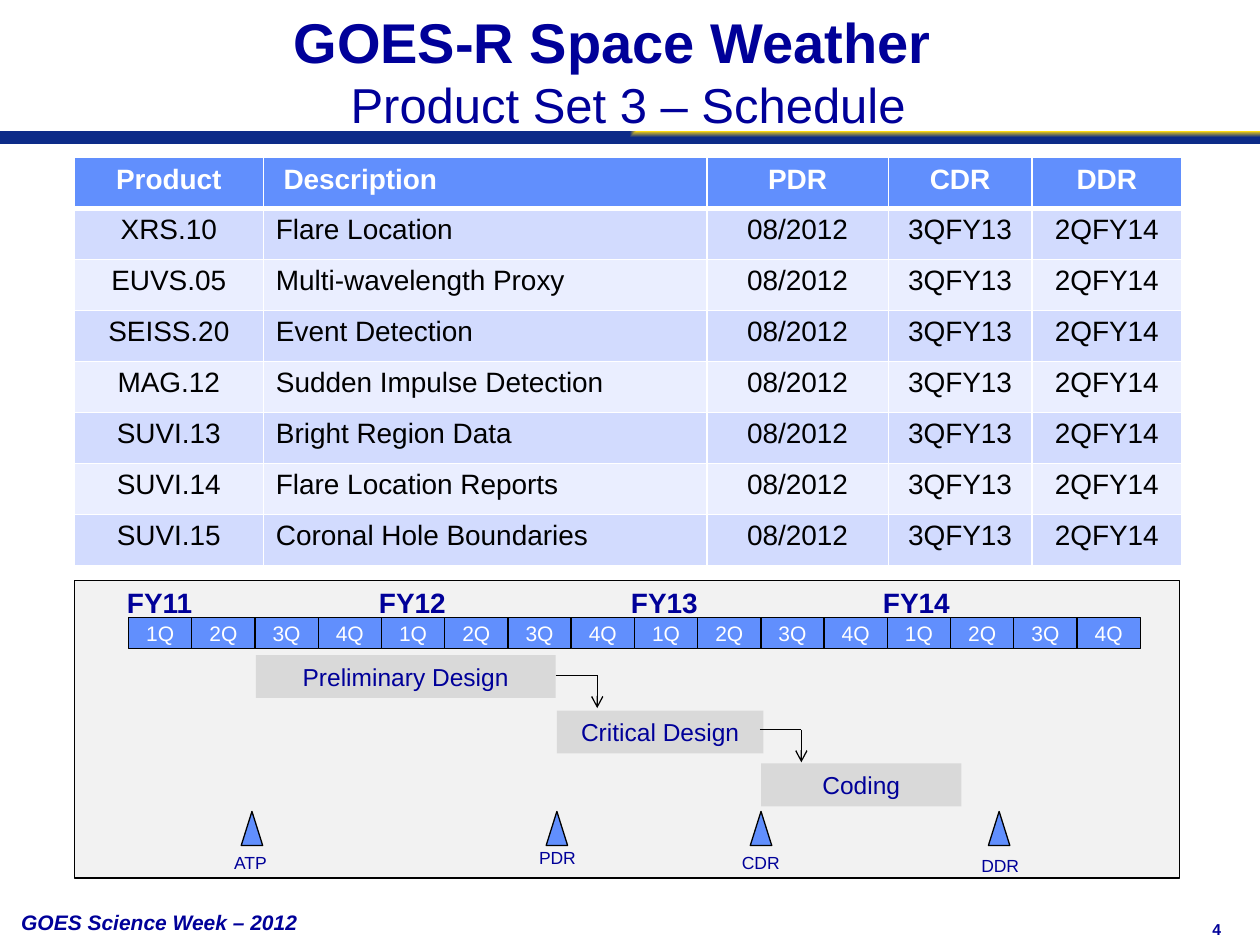
from dataclasses import dataclass
from typing import NamedTuple

from lxml.etree import SubElement
from pptx import Presentation
from pptx.dml.color import RGBColor
from pptx.enum.shapes import MSO_CONNECTOR as Conn, MSO_SHAPE as Shape
from pptx.enum.text import MSO_ANCHOR as Anchor, MSO_AUTO_SIZE as Fit, PP_ALIGN as Align
from pptx.oxml import parse_xml
from pptx.oxml.ns import nsdecls, qn
from pptx.util import Inches, Pt


@dataclass(frozen=True)
class Theme:
    font: str = "Arial"
    navy: str = "000099"
    blue: str = "618FFD"
    white: str = "FFFFFF"
    black: str = "000000"
    panel: str = "F2F2F2"
    bar: str = "D9D9D9"
    bands: tuple = ("D2DBFE", "EAEEFF")
    gold: str = "FED910"
    deep: str = "0D2B88"
    title: int = 32
    sub: int = 28
    cell: int = 16
    phase: int = 14
    small: int = 12
    mark: int = 10
    page: int = 9


class Phase(NamedTuple):
    name: str
    left: float
    top: float
    width: float


class Mark(NamedTuple):
    name: str
    mid: float
    left: float
    top: float


class Step(NamedTuple):
    left: float
    top: float


T = Theme()
HEAD = ("Product", "Description", "PDR", "CDR", "DDR")
ITEMS = (
    ("XRS.10", "Flare Location"),
    ("EUVS.05", "Multi-wavelength Proxy"),
    ("SEISS.20", "Event Detection"),
    ("MAG.12", "Sudden Impulse Detection"),
    ("SUVI.13", "Bright Region Data"),
    ("SUVI.14", "Flare Location Reports"),
    ("SUVI.15", "Coronal Hole Boundaries"),
)
DATES = ("08/2012", "3QFY13", "2QFY14")
WIDTHS = (1.5, 3.52, 1.44, 1.14, 1.19)
YEARS = ("FY11", "FY12", "FY13", "FY14")
PHASES = (
    Phase("Preliminary Design", 2.03, 5.2, 2.38),
    Phase("Critical Design", 4.42, 5.64, 1.64),
    Phase("Coding", 6.04, 6.06, 1.59),
)
MARKS = (
    Mark("ATP", 2, 1.76, 6.71),
    Mark("PDR", 4.42, 4.18, 6.67),
    Mark("CDR", 6.04, 5.79, 6.71),
    Mark("DDR", 7.93, 7.69, 6.74),
)
STEPS = (Step(4.41, 5.36), Step(6.03, 5.79))


def rgb(code: str) -> RGBColor:
    return RGBColor.from_string(code)


def write(para, text: str, size: int, color: str = T.navy, bold: bool = False,
          italic: bool = False, align=Align.LEFT) -> None:
    para.alignment = align
    run = para.add_run()
    run.text = text
    font = run.font
    font.name, font.size, font.bold, font.italic = T.font, Pt(size), bold, italic
    font.color.rgb = rgb(color)


def box(slide, left: float, top: float, width: float, height: float, wrap: bool = False):
    """Add an empty text box and return its first paragraph."""
    frame = slide.shapes.add_textbox(*map(Inches, (left, top, width, height))).text_frame
    frame.word_wrap = wrap
    return frame.paragraphs[0]


def block(slide, left: float, top: float, width: float, height: float,
          fill: str, edge: bool = True, kind=Shape.RECTANGLE):
    item = slide.shapes.add_shape(kind, *map(Inches, (left, top, width, height)))
    item.shadow.inherit = False
    item.fill.solid()
    item.fill.fore_color.rgb = rgb(fill)
    if edge:
        item.line.color.rgb = rgb(T.black)
        item.line.width = Pt(0.75)
    else:
        item.line.fill.background()
    frame = item.text_frame
    frame.margin_top = frame.margin_bottom = 0
    frame.vertical_anchor = Anchor.MIDDLE
    return item


def line(slide, x1: float, y1: float, x2: float, y2: float, arrow: bool = False) -> None:
    link = slide.shapes.add_connector(Conn.STRAIGHT, *map(Inches, (x1, y1, x2, y2)))
    link.line.color.rgb = rgb(T.black)
    link.line.width = Pt(0.75)
    if arrow:
        SubElement(link.line._get_or_add_ln(), qn("a:tailEnd"), type="arrow")
    SubElement(link._element.spPr, qn("a:effectLst"))


def frame_cell(cell, base: int) -> None:
    """Give a cell white borders, with the bottom one base points wide."""
    props = cell._tc.get_or_add_tcPr()
    for spot, (side, wide) in enumerate((("L", 1), ("R", 1), ("T", 1), ("B", base))):
        props.insert(spot, parse_xml(
            f'<a:ln{side} {nsdecls("a")} w="{Pt(wide)}"><a:solidFill>'
            f'<a:srgbClr val="{T.white}"/></a:solidFill></a:ln{side}>'))


def add_title(slide) -> None:
    title = slide.shapes.title
    title.left, title.top, title.width, title.height = map(Inches, (2.11, 0.01, 5.75, 1.11))
    frame = title.text_frame
    frame.auto_size, frame.word_wrap, frame.vertical_anchor = Fit.NONE, True, Anchor.TOP
    first, second = frame.paragraphs[0], frame.add_paragraph()
    write(first, "GOES-R Space Weather", T.title, bold=True, align=Align.CENTER)
    write(second, "Product Set 3 – Schedule", T.sub, align=Align.CENTER)
    for para, inset in ((first, 0.25), (second, 0)):
        para._p.get_or_add_pPr().set("marR", str(Inches(inset)))


def add_rule(slide) -> None:
    """Draw the band under the title, gold at its top right corner."""
    rule = block(slide, 0, 1.04, 10, 0.1, T.deep, edge=False)
    props = rule._element.spPr
    props.replace(props.find(qn("a:solidFill")), parse_xml(
        f'<a:gradFill {nsdecls("a")} rotWithShape="1"><a:gsLst>'
        f'<a:gs pos="0"><a:srgbClr val="{T.gold}"/></a:gs>'
        f'<a:gs pos="100000"><a:srgbClr val="{T.deep}"/></a:gs></a:gsLst>'
        '<a:path path="rect"><a:fillToRect l="100000" b="100000"/></a:path></a:gradFill>'))


def add_products(slide) -> None:
    rows = [HEAD, *(item + DATES for item in ITEMS)]
    table = slide.shapes.add_table(
        len(rows), len(HEAD), *map(Inches, (0.59, 1.25, sum(WIDTHS), 3.24))).table
    for col, width in zip(table.columns, WIDTHS):
        col.width = Inches(width)
    for r, row in enumerate(rows):
        for c, text in enumerate(row):
            cell, head = table.cell(r, c), r == 0
            cell.fill.solid()
            cell.fill.fore_color.rgb = rgb(T.blue if head else T.bands[(r - 1) % 2])
            frame_cell(cell, 3 if head else 1)
            if head and c == 1:
                cell.margin_left = Inches(0.16)
            write(cell.text_frame.paragraphs[0], text, T.cell,
                  T.white if head else T.black, bold=head,
                  align=Align.LEFT if c == 1 else Align.CENTER)


def add_chart(slide) -> None:
    block(slide, 0.59, 4.61, 8.77, 2.36, T.panel)
    years = box(slide, 0.91, 4.6, 6.96, 0.37, wrap=True)
    tabs = SubElement(years._p.get_or_add_pPr(), qn("a:tabLst"))
    for n in range(1, len(YEARS)):
        SubElement(tabs, qn("a:tab"), pos=str(Inches(2 * n)), algn="l")
    write(years, "\t".join(YEARS), T.cell, bold=True)
    pitch = 8.03 / 16
    for n in range(4 * len(YEARS)):
        cell = block(slide, 1.02 + n * pitch, 4.9, pitch, 0.25, T.blue)
        frame = cell.text_frame
        frame.margin_left = frame.margin_right = 0
        write(frame.paragraphs[0], f"{n % 4 + 1}Q", T.small, T.white, align=Align.CENTER)
    for name, left, top, width in PHASES:
        bar = block(slide, left, top, width, 0.34, T.bar, edge=False)
        write(bar.text_frame.paragraphs[0], name, T.phase, align=Align.CENTER)
    for name, mid, left, top in MARKS:
        write(box(slide, left, top, 0.5, 0.27), name, T.mark)
        block(slide, mid - 0.17 / 2, 6.44, 0.17, 0.27, T.blue, kind=Shape.ISOSCELES_TRIANGLE)
    for left, top in STEPS:
        turn = left + 0.33
        line(slide, left, top, turn, top)
        line(slide, turn, top, turn, top + 0.26, arrow=True)


def main() -> None:
    deck = Presentation()
    deck.slide_width, deck.slide_height = Inches(10), Inches(7.5)
    slide = deck.slides.add_slide(deck.slide_layouts[5])
    write(box(slide, 9.27, 7.25, 0.52, 0.25), "4", T.page, bold=True, align=Align.RIGHT)
    add_rule(slide)
    write(box(slide, 0.07, 7.17, 2.46, 0.3), "GOES Science Week – 2012", T.small,
          bold=True, italic=True)
    add_products(slide)
    add_chart(slide)
    add_title(slide)
    deck.save("out.pptx")


if __name__ == "__main__":
    main()
